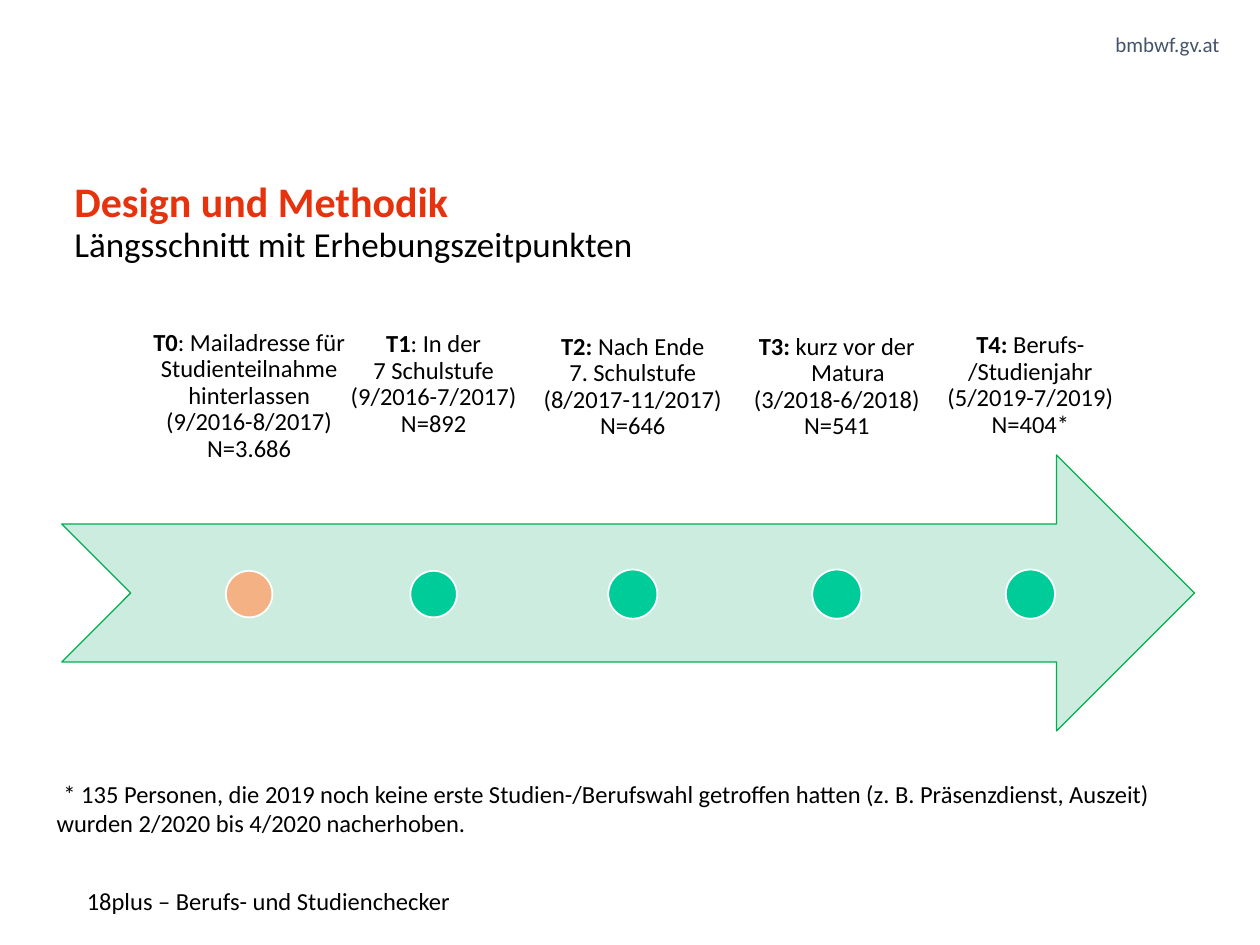
from pptx import Presentation
from pptx.dml.color import RGBColor
from pptx.enum.shapes import MSO_SHAPE
from pptx.enum.text import MSO_ANCHOR, PP_ALIGN
from pptx.util import Pt

ARROW, DOT = MSO_SHAPE.NOTCHED_RIGHT_ARROW, MSO_SHAPE.OVAL
TOP, BOTTOM = MSO_ANCHOR.TOP, MSO_ANCHOR.BOTTOM
LEFT, CENTER, RIGHT = PP_ALIGN.LEFT, PP_ALIGN.CENTER, PP_ALIGN.RIGHT

COLORS = {
    "text": "000000", "title": "E6330E", "address": "44546A", "white": "FFFFFF",
    "arrow": "CBECDE", "outline": "00B050", "wave": "00CC99", "start": "F4B183",
}
FONT = "Calibri"
LABEL_WIDTH = 178.6
DOT_MIDDLE = 339.5

# Each stage: centre, label bottom, label height, dot size, dot colour, name, lines
STAGES = [
    (142.4, 274.3, 88.6, 26.6, "start", "T0",
     [": Mailadresse für Studienteilnahme hinterlassen", "(9/2016-8/2017)", "N=3.686"]),
    (247.8, 259.9, 70.6, 26.6, "wave", "T1",
     [": In der", "7 Schulstufe", "(9/2016-7/2017)", "N=892"]),
    (361.6, 261.4, 70.6, 28.1, "wave", "T2:",
     [" Nach Ende", "7. Schulstufe", "(8/2017-11/2017)", "N=646"]),
    (478.2, 261.4, 70.6, 28.1, "wave", "T3:",
     [" kurz vor der", "Matura", "(3/2018-6/2018)", "N=541"]),
    (588.8, 260.6, 70.6, 28.1, "wave", "T4:",
     [" Berufs-", "/Studienjahr", "(5/2019-7/2019)", "N=404*"]),
]
INDENTS = {"Matura": 12.6}


def add_span(para, text, size=14, color="text", bold=False):
    """Add one formatted run to a paragraph."""
    span = para.add_run()
    span.text = text
    span.font.name = FONT
    span.font.size = Pt(size)
    span.font.bold = bold
    span.font.color.rgb = RGBColor.from_string(COLORS[color])


class Page:
    """Hold the style and the current slide."""

    def __init__(self, deck):
        self.shapes = deck.slides.add_slide(deck.slide_layouts[6]).shapes

    def text(self, left, top, width, height, paras, align=LEFT, anchor=TOP,
             margins=(0, 0), spacing=1.0):
        """Add a text box; each paragraph is a list of (text, format) pairs."""
        box = self.shapes.add_textbox(Pt(left), Pt(top), Pt(width), Pt(height))
        frame = box.text_frame
        frame.word_wrap = True
        frame.vertical_anchor = anchor
        frame.margin_left = frame.margin_right = Pt(margins[0])
        frame.margin_top = frame.margin_bottom = Pt(margins[1])
        for index, spans in enumerate(paras):
            para = frame.add_paragraph() if index else frame.paragraphs[0]
            para.alignment = align
            para.line_spacing = spacing
            for text, style in spans:
                add_span(para, text, **style)
        return frame

    def shape(self, kind, left, top, width, height, fill, line, weight):
        """Add a filled and outlined preset shape."""
        shape = self.shapes.add_shape(kind, Pt(left), Pt(top), Pt(width), Pt(height))
        shape.shadow.inherit = False
        shape.fill.solid()
        shape.fill.fore_color.rgb = RGBColor.from_string(COLORS[fill])
        shape.line.color.rgb = RGBColor.from_string(COLORS[line])
        shape.line.width = Pt(weight)

    def stage(self, center, bottom, height, size, color, name, lines):
        """Add the label and the dot of one survey date."""
        paras = [[(line, {})] for line in lines]
        paras[0].insert(0, (name, {"bold": True}))
        frame = self.text(center - LABEL_WIDTH / 2, bottom - height, LABEL_WIDTH, height,
                          paras, align=CENTER, anchor=BOTTOM, margins=(10, 10), spacing=0.9)
        for para in frame.paragraphs:
            if para.text in INDENTS:
                para._p.get_or_add_pPr().set("marL", str(Pt(INDENTS[para.text])))
        self.shape(DOT, center - size / 2, DOT_MIDDLE - size / 2, size, size,
                   color, "white", 1)


def main():
    """Build the slide and save it."""
    deck = Presentation()
    deck.slide_width, deck.slide_height = Pt(720), Pt(540)
    page = Page(deck)

    page.text(523.4, 18, 173.5, 14.4,
              [[("bmbwf.gv.at", {"size": 12, "color": "address"})]], align=RIGHT)
    page.text(42.5, 103.7, 628.6, 65.5, [
        [("Design und Methodik", {"size": 24, "color": "title", "bold": True})],
        [("Längsschnitt mit Erhebungszeitpunkten", {"size": 20})],
    ], spacing=0.9)

    page.shape(ARROW, 35.3, 260, 647.3, 157.7, "arrow", "outline", 0.75)
    for stage in STAGES:
        page.stage(*stage)

    note = page.text(25.2, 441.6, 663.1, 45, [[(
        "* 135 Personen, die 2019 noch keine erste Studien-/Berufswahl getroffen hatten "
        "(z. B. Präsenzdienst, Auszeit) wurden 2/2020 bis 4/2020 nacherhoben.", {})]],
        margins=(7.2, 3.6))
    note.paragraphs[0]._p.get_or_add_pPr().set("indent", str(Pt(4)))
    page.text(42.5, 502.6, 541.4, 20.9, [[("18plus – Berufs- und Studienchecker", {})]],
              margins=(7.2, 3.6))

    deck.save("out.pptx")


if __name__ == "__main__":
    main()
